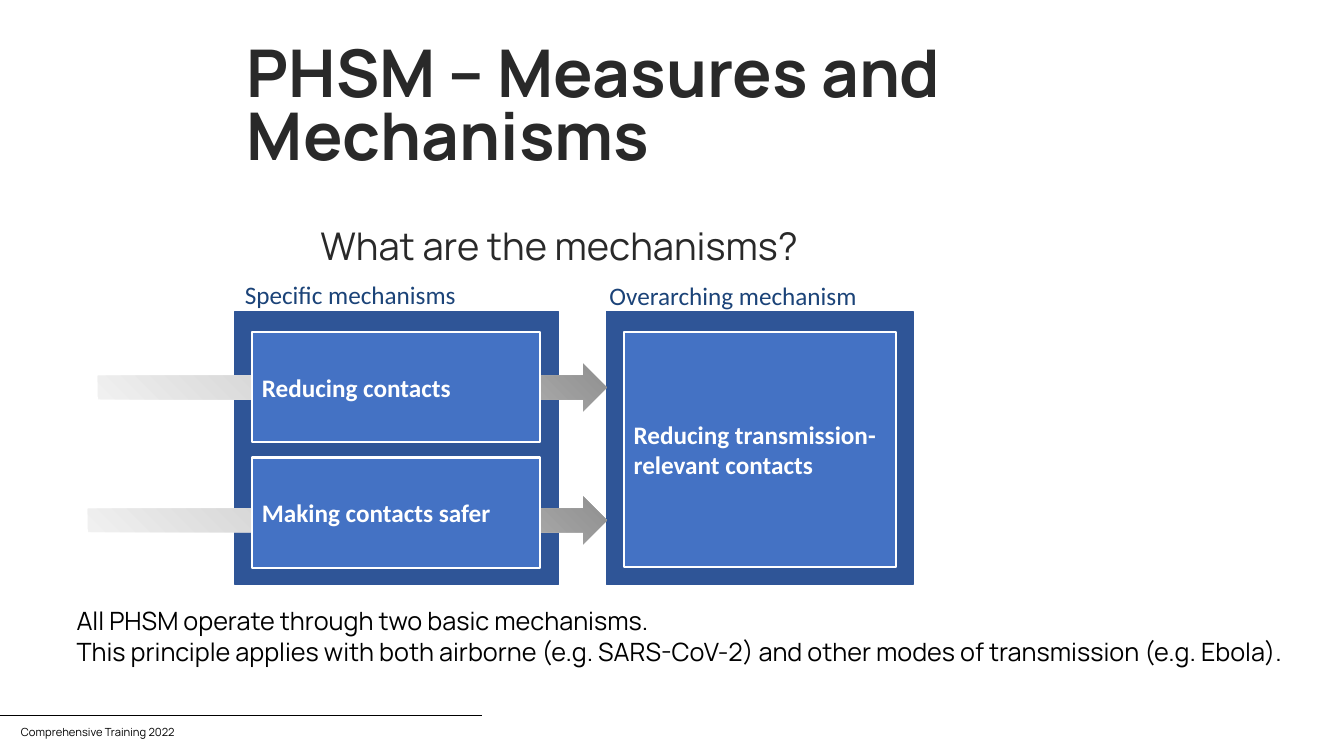
"""Build the slide on PHSM measures and mechanisms."""
from lxml import etree
from pptx import Presentation
from pptx.dml.color import RGBColor
from pptx.enum.shapes import MSO_CONNECTOR, MSO_SHAPE
from pptx.enum.text import MSO_ANCHOR, PP_ALIGN
from pptx.oxml import parse_xml
from pptx.oxml.ns import qn
from pptx.util import Cm, Pt

RECT, ARROW = MSO_SHAPE.RECTANGLE, MSO_SHAPE.RIGHT_ARROW
STRAIGHT = MSO_CONNECTOR.STRAIGHT
TOP, MIDDLE = MSO_ANCHOR.TOP, MSO_ANCHOR.MIDDLE
LEFT, CENTER = PP_ALIGN.LEFT, PP_ALIGN.CENTER

BLACK = RGBColor(0, 0, 0)
WHITE = RGBColor(255, 255, 255)
INK = RGBColor(0x29, 0x29, 0x29)
NAVY = RGBColor(0x1B, 0x43, 0x78)
DARK = RGBColor(0x2F, 0x55, 0x97)
BLUE = RGBColor(0x44, 0x72, 0xC4)

HEAD, BODY = "Manrope", "Calibri"
TITLE = "PHSM – Measures and Mechanisms"
ASK = "What are the mechanisms?"
NOTES = [
    "All PHSM operate through two basic mechanisms.",
    "This principle applies with both airborne (e.g. SARS-CoV-2) "
    "and other modes of transmission (e.g. Ebola).",
]
FOOT = "Comprehensive Training 2022"
LABELS = [
    ("Specific mechanisms", (5.92, 6.91, 8.15, 1.02)),
    ("Overarching mechanism", (15.11, 6.93, 7.9, 1.02)),
]
STEPS = [("Reducing contacts", 2.46), ("Making contacts safer", 2.21)]
GOAL = "Reducing transmission-relevant contacts"
SHADES = [(0, "909090"), (50, "CCCCCC"), (100, "F2F2F2")]

PANEL_Y, PANEL_H = 7.85, 6.88
PANELS = [(5.92, 8.15), (15.29, 7.72)]
TIP = PANELS[1][0]
CARD_Y, CARD_H, STEP = 8.36, 2.79, 3.17
SHAFT_Y, SHAFT_H, SHAFT_STEP = 9.17, 1.19, 3.35

deck = Presentation()
deck.slide_width, deck.slide_height = Cm(33.87), Cm(19.05)
slide = deck.slides.add_slide(deck.slide_layouts[6])


def write(shape, text, size=18, font=BODY, color=WHITE, bold=False,
          align=LEFT, anchor=TOP, gap=None):
    """Fill a shape with one paragraph per line of text."""
    frame = shape.text_frame
    frame.word_wrap = True
    frame.vertical_anchor = anchor
    for i, line in enumerate(text.split("\n")):
        para = frame.add_paragraph() if i else frame.paragraphs[0]
        para.alignment = align
        if gap:
            para.line_spacing = gap
        run = para.add_run()
        run.text = line
        run.font.size, run.font.name = Pt(size), font
        run.font.bold, run.font.color.rgb = bold, color


def label(box, text, **style):
    """Add a text box."""
    write(slide.shapes.add_textbox(*map(Cm, box)), text, **style)


def block(box, fill, edge, width):
    """Add a filled rectangle with an outline."""
    shape = slide.shapes.add_shape(RECT, *map(Cm, box))
    shape.shadow.inherit = False
    shape.fill.solid()
    shape.fill.fore_color.rgb = fill
    shape.line.color.rgb, shape.line.width = edge, Pt(width)
    return shape


def card(box, text):
    """Add a white-edged card with bold text."""
    write(block(box, BLUE, WHITE, 1.5), text, bold=True, anchor=MIDDLE)


def arrow(box):
    """Add an arrow that fades away from its tip."""
    shape = slide.shapes.add_shape(ARROW, *map(Cm, box))
    shape.shadow.inherit = False
    shape.line.fill.background()
    shape.fill.background()
    stops = "".join(
        f'<a:gs pos="{at * 1000}"><a:srgbClr val="{tone}"/></a:gs>'
        for at, tone in SHADES)
    fade = parse_xml(
        '<a:gradFill xmlns:a="http://schemas.openxmlformats.org/drawingml/2006/main">'
        f'<a:gsLst>{stops}</a:gsLst><a:path path="circle">'
        '<a:fillToRect l="100000" b="100000"/></a:path></a:gradFill>')
    props = shape._element.spPr
    props.replace(props.find(qn("a:noFill")), fade)


label((0.28, 18.16, 11.15, 0.61), FOOT, size=8, font=HEAD, color=BLACK)
rule = slide.shapes.add_connector(STRAIGHT, 0, Cm(18.03), Cm(12.14), Cm(18.03))
rule.line.color.rgb, rule.line.width = BLACK, Pt(0.5)
etree.SubElement(rule._element.spPr, qn("a:effectLst"))

label((6.5, 5.79, 15.19, 1.14), ASK, size=27.2, font=HEAD, color=INK,
      align=CENTER, gap=0.7)
for x, w in PANELS:
    block((x, PANEL_Y, w, PANEL_H), DARK, DARK, 1)
card((15.72, CARD_Y, 6.86, 5.92), GOAL)
for i, (_, x) in enumerate(STEPS):
    arrow((x, SHAFT_Y + i * SHAFT_STEP, TIP - x, SHAFT_H))
for i, (text, _) in enumerate(STEPS):
    card((6.35, CARD_Y + i * STEP, 7.26, CARD_H), text)
for text, box in LABELS:
    label(box, text, color=NAVY)
label((1.68, 15.14, 32.18, 1.8), "\n".join(NOTES), font=HEAD, color=BLACK)
label((5.97, 1.05, 26.67, 3.63), TITLE, size=47, font=HEAD, color=INK,
      bold=True, gap=0.8)

deck.save("out.pptx")
